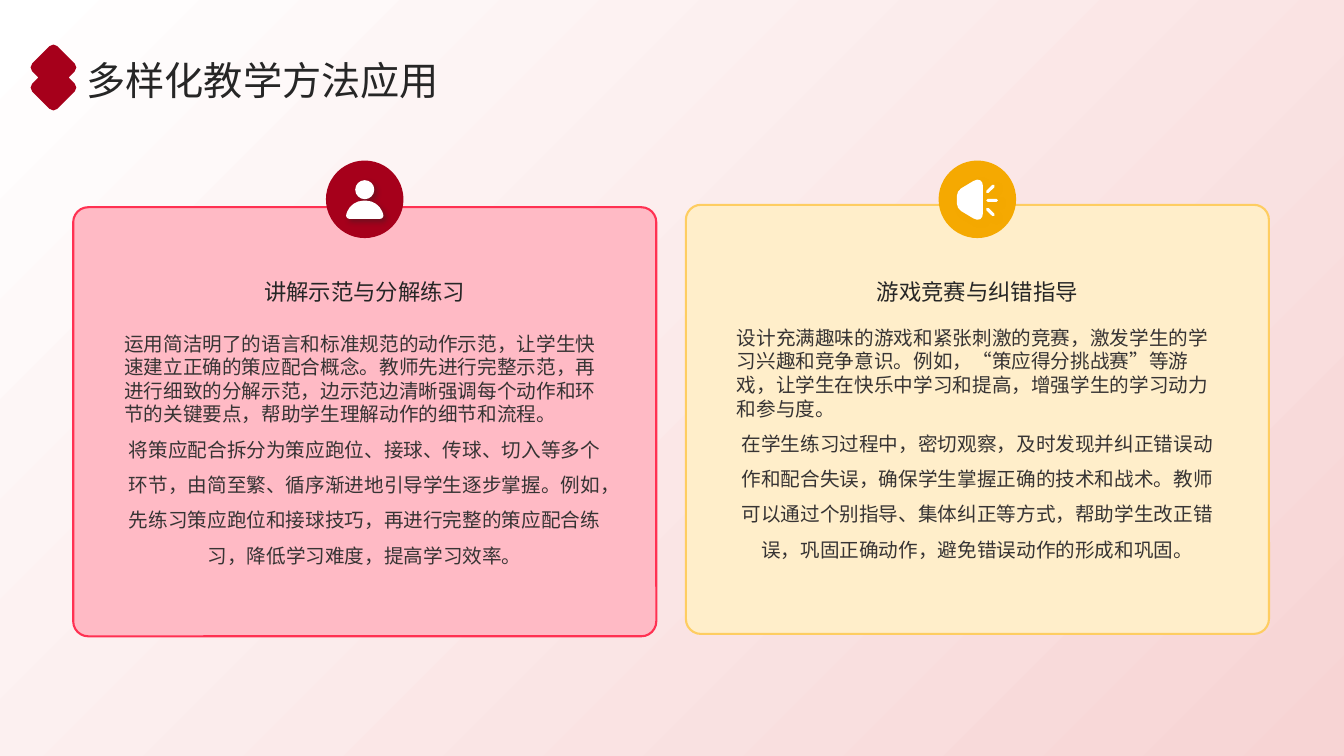
"""Build the slide on varied teaching methods with two icon cards."""
import math

import pptx
import pptx.dml.color
import pptx.enum.shapes
import pptx.enum.text
import pptx.oxml
import pptx.oxml.ns
import pptx.util

Pt = pptx.util.Pt
RGBColor = pptx.dml.color.RGBColor
SHAPE = pptx.enum.shapes.MSO_SHAPE
ALIGN = pptx.enum.text.PP_ALIGN
qn = pptx.oxml.ns.qn
NAMESPACE = pptx.oxml.ns.nsdecls("a")

FONT = "Noto Sans CJK SC"
WHITE = RGBColor(0xFF, 0xFF, 0xFF)
BLUSH = RGBColor(0xF7, 0xD4, 0xD4)
CRIMSON = RGBColor(0xA6, 0x00, 0x1B)
PINK = RGBColor(0xFF, 0xBA, 0xC5)
RED = RGBColor(0xFF, 0x31, 0x52)
AMBER = RGBColor(0xF5, 0xA9, 0x01)
CREAM = RGBColor(0xFF, 0xEE, 0xCA)
GOLD = RGBColor(0xFE, 0xCD, 0x61)
INK = RGBColor(0x26, 0x26, 0x26)
BODY_INK = RGBColor(0x37, 0x34, 0x34)

TITLE = "多样化教学方法应用"


def beam(start, end, half):
    """Return the corners and cuts of a round-ended stroke."""
    length = math.dist(start, end)
    dx, dy = [(b - a) / length * half for a, b in zip(start, end)]
    corners = [
        (start[0] - dx - dy, start[1] - dy + dx),
        (start[0] - dx + dy, start[1] - dy - dx),
        (end[0] + dx + dy, end[1] + dy - dx),
        (end[0] + dx - dy, end[1] + dy + dx),
    ]
    return corners, [half] * 4


PERSON = [
    ([(-9.5, 1), (9.5, 1), (14.5, 14), (-14.5, 14)], [8, 8, 4, 4]),
    ([(-6.8, -13.7), (6.8, -13.7), (6.8, -0.1), (-6.8, -0.1)], [6.8] * 4),
]
SPEAKER = [
    ([(-14.7, -6), (4, -17.2), (4, 17.7), (-14.7, 6.5)], [3.5, 8, 8, 3.5]),
    beam((7.4, 0.8), (13.6, 0.8), 1.1),
    beam((7.2, -5.4), (11.4, -9.5), 1.1),
    beam((7.2, 7), (11.4, 11.1), 1.1),
]
TITLE_MARK = [
    ([(0, -25.2), (18, -7.2), (10.8, 0), (18, 7.2),
      (0, 25.2), (-18, 7.2), (-10.8, 0), (-18, -7.2)],
     [4, 4, 0, 4, 4, 4, 0, 4]),
]

CARDS = [
    {
        "left": 52.3, "top": 148, "text_top": 233.4,
        "fill": PINK, "edge": RED, "badge": CRIMSON,
        "icon": PERSON, "shadow": "262626",
        "heading": "讲解示范与分解练习",
        "body": [
            "运用简洁明了的语言和标准规范的动作示范，让学生快速建立正确的策应配合概念。教师先进行完整示范，再进行细致的分解示范，边示范边清晰强调每个动作和环节的关键要点，帮助学生理解动作的细节和流程。",
            "将策应配合拆分为策应跑位、接球、传球、切入等多个环节，由简至繁、循序渐进地引导学生逐步掌握。例如，先练习策应跑位和接球技巧，再进行完整的策应配合练习，降低学习难度，提高学习效率。",
        ],
    },
    {
        "left": 489.9, "top": 146.3, "text_top": 229.2,
        "fill": CREAM, "edge": GOLD, "badge": AMBER,
        "icon": SPEAKER, "shadow": "F5A901",
        "heading": "游戏竞赛与纠错指导",
        "body": [
            "设计充满趣味的游戏和紧张刺激的竞赛，激发学生的学习兴趣和竞争意识。例如，“策应得分挑战赛”等游戏，让学生在快乐中学习和提高，增强学生的学习动力和参与度。",
            "在学生练习过程中，密切观察，及时发现并纠正错误动作和配合失误，确保学生掌握正确的技术和战术。教师可以通过个别指导、集体纠正等方式，帮助学生改正错误，巩固正确动作，避免错误动作的形成和巩固。",
        ],
    },
]
CARD_WIDTH, CARD_HEIGHT = 416.5, 306.5
TEXT_WIDTH = 357.8
BADGE, BADGE_MIDDLE = 55.4, 142.4


def paint(shape, fill, edge=None):
    shape.shadow.inherit = False
    shape.fill.solid()
    shape.fill.fore_color.rgb = fill
    if edge is None:
        shape.line.fill.background()
    else:
        shape.line.color.rgb = edge
        shape.line.width = Pt(1.5)


def add_shape(page, kind, left, top, width, height):
    return page.shapes.add_shape(kind, Pt(left), Pt(top), Pt(width), Pt(height))


def toward(start, end, share):
    return tuple(a + (b - a) * share for a, b in zip(start, end))


def rounded(corners, cuts):
    """Return outline points and, for each, whether a curve starts there."""
    points, curved = [], []
    for index, (corner, cut) in enumerate(zip(corners, cuts)):
        if cut == 0:
            points.append(corner)
            curved.append(False)
            continue
        first, last = [toward(corner, other, cut / math.dist(corner, other))
                       for other in (corners[index - 1], corners[(index + 1) % len(corners)])]
        points += [first, toward(first, corner, 0.55), toward(last, corner, 0.55), last]
        curved += [True, False, False, False]
    return points, curved


def add_outline(page, contours, x, y, fill):
    builder, starts = None, []
    for corners, cuts in contours:
        points, curved = rounded(corners, cuts)
        starts += curved + [False]
        places = [(Pt(x + px), Pt(y + py)) for px, py in points]
        if builder is None:
            builder = page.shapes.build_freeform(*places[0])
        else:
            builder.move_to(*places[0])
        builder.add_line_segments(places[1:], close=True)
    shape = builder.convert_to_shape()
    steps = list(next(shape.element.iter(qn("a:path"))))
    for index, start in enumerate(starts):
        if start:
            curve = pptx.oxml.parse_xml(f"<a:cubicBezTo {NAMESPACE}/>")
            steps[index].addnext(curve)
            for step in steps[index + 1:index + 4]:
                curve.append(step[0])
                step.getparent().remove(step)
    paint(shape, fill)
    return shape


def add_shadow(shape, color):
    effects = shape.element.spPr.find(qn("a:effectLst"))
    effects.append(pptx.oxml.parse_xml(
        f'<a:outerShdw {NAMESPACE} blurRad="{Pt(4)}" dist="{Pt(3)}" '
        f'dir="2700000" algn="tl" rotWithShape="0"><a:srgbClr val="{color}">'
        '<a:alpha val="40000"/></a:srgbClr></a:outerShdw>'))


def write(frame, text, size, color, align, spacing):
    frame.word_wrap = True
    para = frame.paragraphs[0]
    para.alignment = align
    para.line_spacing = spacing
    span = para.add_run()
    span.text = text
    span.font.size = Pt(size)
    span.font.name = FONT
    span.font.color.rgb = color
    latin = next(para.runs[0].font._element.iter(qn("a:latin")))
    latin.addnext(pptx.oxml.parse_xml(f'<a:ea {NAMESPACE} typeface="{FONT}"/>'))


def add_text(page, left, top, height, text, size, color, spacing):
    box = page.shapes.add_textbox(Pt(left), Pt(top), Pt(TEXT_WIDTH), Pt(height))
    write(box.text_frame, text, size, color, ALIGN.CENTER, spacing)


def add_title(page):
    title = page.shapes.title
    title.left, title.top = Pt(61.8), Pt(36.9)
    title.width, title.height = Pt(840), Pt(36.7)
    frame = title.text_frame
    frame.auto_size = pptx.enum.text.MSO_AUTO_SIZE.NONE
    frame.vertical_anchor = pptx.enum.text.MSO_ANCHOR.MIDDLE
    frame.margin_left = frame.margin_right = 0
    frame.margin_top = frame.margin_bottom = 0
    write(frame, TITLE, 28, INK, ALIGN.LEFT, 1.1)
    add_outline(page, TITLE_MARK, 38.2, 55.4, CRIMSON)


def add_background(page):
    backdrop = add_shape(page, SHAPE.RECTANGLE, 0, 0, 960, 540)
    paint(backdrop, WHITE)
    backdrop.fill.gradient()
    backdrop.fill.gradient_angle = 315
    for stop, color, position in zip(backdrop.fill.gradient_stops, (WHITE, BLUSH), (0, 1)):
        stop.color.rgb = color
        stop.position = position
    page.shapes.title.element.addprevious(backdrop.element)


def add_card(page, card):
    middle = card["left"] + CARD_WIDTH / 2
    panel = add_shape(page, SHAPE.ROUNDED_RECTANGLE, card["left"], card["top"],
                      CARD_WIDTH, CARD_HEIGHT)
    panel.adjustments[0] = 0.035
    paint(panel, card["fill"], card["edge"])
    badge = add_shape(page, SHAPE.FLOWCHART_CONNECTOR, middle - BADGE / 2,
                      BADGE_MIDDLE - BADGE / 2, BADGE, BADGE)
    paint(badge, card["badge"])
    add_shadow(add_outline(page, card["icon"], middle, BADGE_MIDDLE, WHITE), card["shadow"])
    text_left = middle - TEXT_WIDTH / 2
    add_text(page, text_left, 193, 28.8, card["heading"], 16, INK, 1.1)
    add_text(page, text_left, card["text_top"], 210.2, "\n".join(card["body"]), 14, BODY_INK, 1.5)


def main():
    deck = pptx.Presentation()
    deck.slide_width, deck.slide_height = Pt(960), Pt(540)
    page = deck.slides.add_slide(deck.slide_layouts[5])
    add_background(page)
    add_title(page)
    for card in CARDS:
        add_card(page, card)
    deck.save("out.pptx")


if __name__ == "__main__":
    main()
